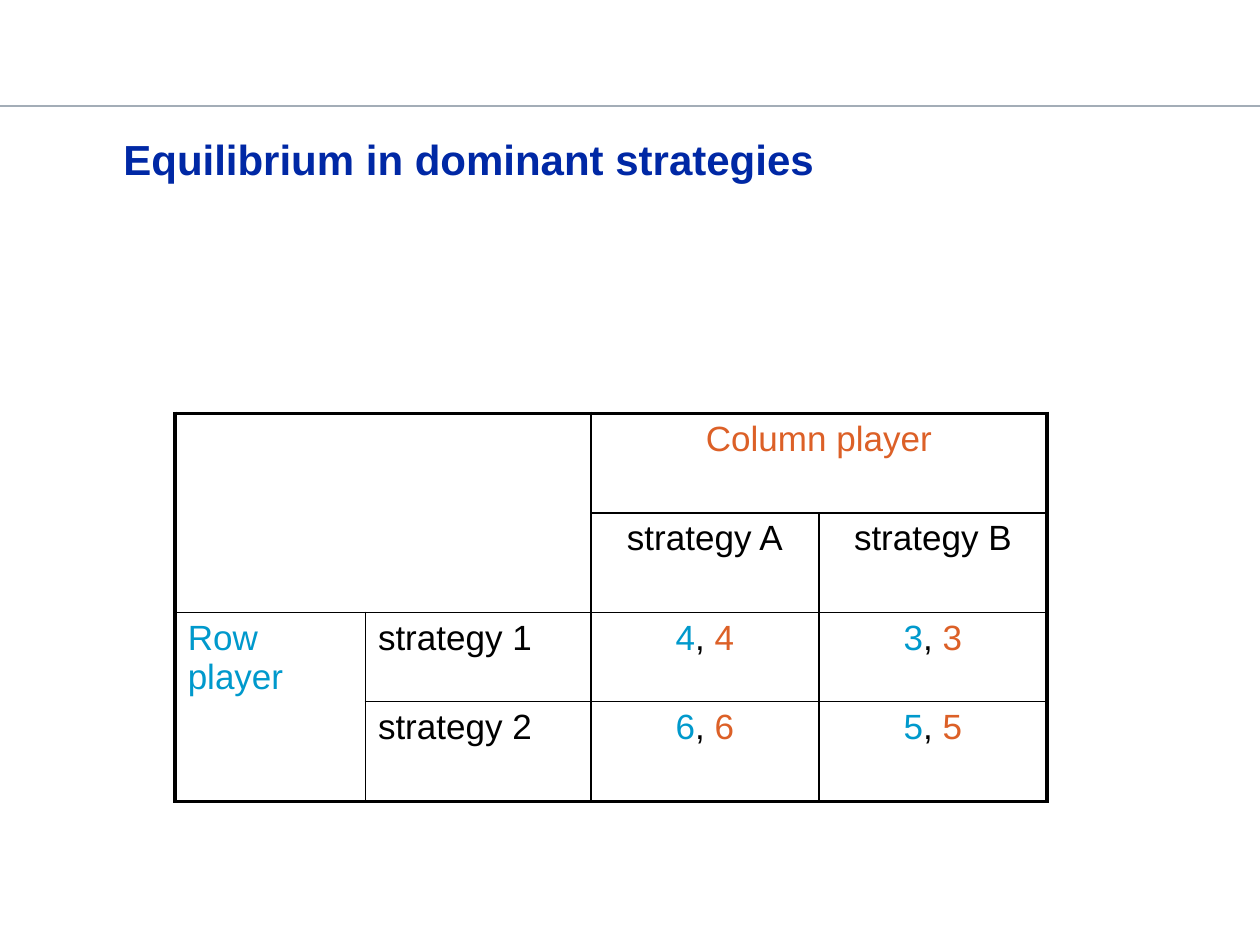
from dataclasses import dataclass

from lxml.etree import SubElement
from pptx import Presentation
from pptx.dml.color import RGBColor
from pptx.enum.shapes import MSO_CONNECTOR
from pptx.enum.text import MSO_ANCHOR, PP_ALIGN as Align
from pptx.oxml.ns import qn
from pptx.util import Inches, Pt

COLORS = {
    "title": "0028A5",
    "rule": "A3ADB7",
    "text": "000000",
    "border": "000000",
    "row_player": "0099CC",
    "column_player": "DC6027",
}
FONT = "Arial"
OUTER, INNER = Pt(2.25), Pt(1)
COLUMN_WIDTHS = (1.51, 1.79, 1.81, 1.81)
ROW_HEIGHTS = (0.79, 0.79, 0.71, 0.79)


@dataclass
class Entry:
    row: int
    column: int
    runs: tuple[tuple[str, str], ...] = ()
    align: Align = Align.CENTER
    row_span: int = 1
    column_span: int = 1


def label(row: int, column: int, wording: str, color: str = "text", **layout) -> Entry:
    return Entry(row, column, ((wording, color),), **layout)


def payoff(row: int, column: int, row_gain: int, column_gain: int) -> Entry:
    return Entry(row, column, (
        (str(row_gain), "row_player"),
        (", ", "text"),
        (str(column_gain), "column_player"),
    ))


ENTRIES = (
    Entry(0, 0, row_span=2, column_span=2),
    label(0, 2, "Column player", "column_player", column_span=2),
    label(1, 2, "strategy A"),
    label(1, 3, "strategy B"),
    label(2, 0, "Row player", "row_player", align=Align.LEFT, row_span=2),
    label(2, 1, "strategy 1", align=Align.LEFT),
    label(3, 1, "strategy 2", align=Align.LEFT),
    payoff(2, 2, 4, 4),
    payoff(2, 3, 3, 3),
    payoff(3, 2, 6, 6),
    payoff(3, 3, 5, 5),
)


def rgb(name: str) -> RGBColor:
    return RGBColor.from_string(COLORS[name])


def draw_rule(slide) -> None:
    y = Inches(0.84)
    rule = slide.shapes.add_connector(MSO_CONNECTOR.STRAIGHT, 0, y, Inches(10), y)
    rule.line.color.rgb = rgb("rule")
    rule.line.width = Pt(1.25)
    SubElement(rule._element.spPr, qn("a:effectLst"))


def draw_title(slide, wording: str) -> None:
    box = slide.shapes.add_textbox(Inches(0.98), Inches(0.99), Inches(8.03), Inches(0.55))
    frame = box.text_frame
    frame.word_wrap = True
    frame.vertical_anchor = MSO_ANCHOR.MIDDLE
    frame.margin_left = frame.margin_right = frame.margin_bottom = 0
    frame.margin_top = Inches(0.04)
    heading = frame.paragraphs[0]
    heading.text = wording
    heading.line_spacing = 0.9
    heading.font.name = FONT
    heading.font.size = Pt(24)
    heading.font.bold = True
    heading.font.color.rgb = rgb("title")


def set_borders(cell, entry: Entry) -> None:
    """Draw the edges on the table's outline thick and all others thin."""
    on_outline = {
        "L": entry.column == 0,
        "R": entry.column + entry.column_span == len(COLUMN_WIDTHS),
        "T": entry.row == 0,
        "B": entry.row + entry.row_span == len(ROW_HEIGHTS),
    }
    properties = cell._tc.get_or_add_tcPr()
    for side, is_outer in on_outline.items():
        edge = SubElement(properties, qn(f"a:ln{side}"), w=str(OUTER if is_outer else INNER))
        fill = SubElement(edge, qn("a:solidFill"))
        SubElement(fill, qn("a:srgbClr"), val=COLORS["border"])


def fill_entry(table, entry: Entry) -> None:
    cell = table.cell(entry.row, entry.column)
    last_row = entry.row + entry.row_span
    last_column = entry.column + entry.column_span
    if entry.row_span * entry.column_span > 1:
        cell.merge(table.cell(last_row - 1, last_column - 1))
    for row in range(entry.row, last_row):
        for column in range(entry.column, last_column):
            covered = table.cell(row, column)
            set_borders(covered, entry)
            covered.fill.background()

    paragraph = cell.text_frame.paragraphs[0]
    paragraph.alignment = entry.align
    paragraph.font.name = FONT
    paragraph.font.size = Pt(20)
    for wording, color in entry.runs:
        run = paragraph.add_run()
        run.text = wording
        run.font.color.rgb = rgb(color)


def draw_game(slide) -> None:
    table = slide.shapes.add_table(
        len(ROW_HEIGHTS), len(COLUMN_WIDTHS), Inches(1.39), Inches(3.28),
        Inches(sum(COLUMN_WIDTHS)), Inches(sum(ROW_HEIGHTS)),
    ).table
    table.first_row = table.horz_banding = False
    for column, width in zip(table.columns, COLUMN_WIDTHS):
        column.width = Inches(width)
    for row, height in zip(table.rows, ROW_HEIGHTS):
        row.height = Inches(height)
    for entry in ENTRIES:
        fill_entry(table, entry)


def main() -> None:
    presentation = Presentation()
    presentation.slide_width, presentation.slide_height = Inches(10), Inches(7.5)
    slide = presentation.slides.add_slide(presentation.slide_layouts[6])
    draw_rule(slide)
    draw_game(slide)
    draw_title(slide, "Equilibrium in dominant strategies")
    presentation.save("out.pptx")


if __name__ == "__main__":
    main()
